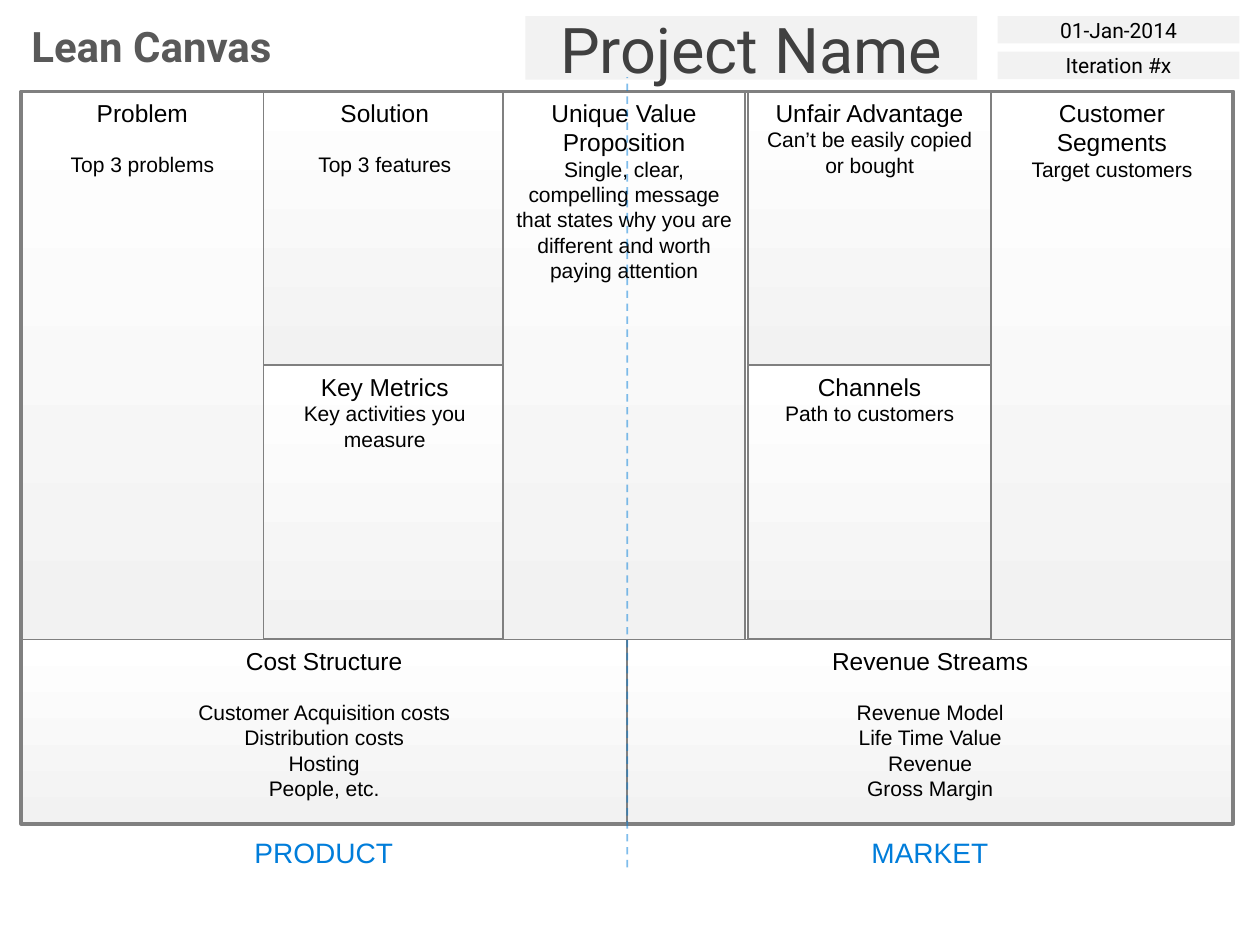
from lxml.etree import SubElement
from pptx import Presentation
from pptx.dml.color import RGBColor
from pptx.enum.dml import MSO_LINE
from pptx.enum.shapes import MSO_CONNECTOR, MSO_SHAPE
from pptx.enum.text import MSO_ANCHOR, MSO_AUTO_SIZE, PP_ALIGN
from pptx.oxml.ns import qn
from pptx.util import Pt

BLACK = RGBColor(0x00, 0x00, 0x00)
WHITE = RGBColor(0xFF, 0xFF, 0xFF)
PALE = RGBColor(0xF2, 0xF2, 0xF2)
GREY = RGBColor(0x80, 0x80, 0x80)
TITLE_GREY = RGBColor(0x59, 0x59, 0x59)
NAME_GREY = RGBColor(0x40, 0x40, 0x40)
BLUE = RGBColor(0x00, 0x7D, 0xDA)

# Canvas grid, in points
LEFT, TOP = 17.2, 74.3
COLUMN, HALF_ROW, BOTTOM_ROW = 197, 222.7, 149.8
WIDTH = 5 * COLUMN
TALL = 2 * HALF_ROW
MIDDLE = LEFT + WIDTH / 2
BLANK_LINE = 20


class Canvas:
    heading_size = 19.9
    body_size = 17.1

    def __init__(self, page):
        self.page = page

    def style(self, para, size, color, font="Arial", bold=False):
        para.alignment = PP_ALIGN.CENTER
        for span in para.runs:
            span.font.size = Pt(size)
            span.font.name = font
            span.font.bold = bold
            span.font.color.rgb = color

    def rectangle(self, left, top, width, height):
        box = self.page.shapes.add_shape(
            MSO_SHAPE.RECTANGLE, Pt(left), Pt(top), Pt(width), Pt(height))
        box.shadow.inherit = False
        return box

    def label(self, text, left, top, width, height, size, color, **font):
        box = self.page.shapes.add_textbox(Pt(left), Pt(top), Pt(width), Pt(height))
        frame = box.text_frame
        frame.text = text
        frame.word_wrap = False
        frame.auto_size = MSO_AUTO_SIZE.SHAPE_TO_FIT_TEXT
        self.style(frame.paragraphs[0], size, color, **font)

    def field(self, text, left, top, width, height, size, color):
        box = self.rectangle(left, top, width, height)
        box.fill.solid()
        box.fill.fore_color.rgb = PALE
        box.line.fill.background()
        frame = box.text_frame
        frame.text = text
        frame.vertical_anchor = MSO_ANCHOR.MIDDLE
        self.style(frame.paragraphs[0], size, color, font="Roboto")

    def block(self, left, top, width, height, heading, body, gap=0):
        box = self.rectangle(left, top, width, height)
        box.fill.gradient()
        box.fill.gradient_angle = 90
        for stop, color in zip(box.fill.gradient_stops, (PALE, WHITE)):
            stop.color.rgb = color
        box.line.color.rgb = GREY
        box.line.width = Pt(1.5)
        frame = box.text_frame
        frame.text = "\n".join([heading, *body])
        frame.word_wrap = True
        frame.vertical_anchor = MSO_ANCHOR.TOP
        frame.margin_left = frame.margin_right = Pt(10)
        frame.margin_top = frame.margin_bottom = Pt(5)
        first, *rest = frame.paragraphs
        self.style(first, self.heading_size, BLACK)
        for para in rest:
            self.style(para, self.body_size, BLACK)
        rest[0].space_before = Pt(gap)

    def border(self, left, top, width, height):
        box = self.rectangle(left, top, width, height)
        box.fill.background()
        box.line.color.rgb = GREY
        box.line.width = Pt(3)

    def divider(self, x, start, end):
        line = self.page.shapes.add_connector(
            MSO_CONNECTOR.STRAIGHT, Pt(x), Pt(start), Pt(x), Pt(end))
        line.line.color.rgb = BLUE
        line.line.width = Pt(1.5)
        line.line.dash_style = MSO_LINE.DASH
        properties = line.element.spPr
        SubElement(properties, qn("a:effectLst"))
        color = next(properties.iter(qn("a:srgbClr")))
        SubElement(color, qn("a:alpha")).set("val", "50000")


def main():
    deck = Presentation()
    deck.slide_width, deck.slide_height = Pt(1024), Pt(768)
    canvas = Canvas(deck.slides.add_slide(deck.slide_layouts[6]))

    # Header
    canvas.label("Lean Canvas", 9.4, 13, 227.5, 49, 34.1, TITLE_GREY,
                 font="Roboto", bold=True)
    canvas.field("Project Name", 427, 13, 367.2, 51.8, 51.2, NAME_GREY)
    for top, text in ((13, "01-Jan-2014"), (42, "Iteration #x")):
        canvas.field(text, 810.7, top, 196.6, 22.3, 17.1, BLACK)

    # Bottom row: costs and revenue
    bottom_blocks = (
        ("Cost Structure", ["Customer Acquisition costs", "Distribution costs",
                            "Hosting", "People, etc."]),
        ("Revenue Streams", ["Revenue Model", "Life Time Value",
                             "Revenue", "Gross Margin"]),
    )
    for side, (heading, body) in enumerate(bottom_blocks):
        canvas.block(LEFT + side * WIDTH / 2, TOP + TALL, WIDTH / 2, BOTTOM_ROW,
                     heading, body, BLANK_LINE)

    # Five columns, each with one tall block or two half blocks;
    # the middle one is set slightly to the left
    columns = (
        (0, [("Problem", "Top 3 problems", BLANK_LINE)]),
        (0, [("Solution", "Top 3 features", BLANK_LINE),
             ("Key Metrics", "Key activities you measure", 0)]),
        (-2.5, [("Unique Value Proposition",
                 "Single, clear, compelling message that states why you are "
                 "different and worth paying attention", 0)]),
        (0, [("Unfair Advantage", "Can’t be easily copied or bought", 0),
             ("Channels", "Path to customers", 0)]),
        (0, [("Customer Segments", "Target customers", 0)]),
    )
    for index, (shift, blocks) in enumerate(columns):
        height = TALL / len(blocks)
        for row, (heading, body, gap) in enumerate(blocks):
            canvas.block(LEFT + index * COLUMN + shift, TOP + row * height,
                         COLUMN, height, heading, [body], gap)

    # Outer border, side labels and dividing line
    canvas.border(LEFT, TOP, WIDTH, TALL + BOTTOM_ROW)
    canvas.label("PRODUCT", 199.4, 675.4, 127.4, 34.6, 22.8, BLUE)
    canvas.label("MARKET", 700.6, 675.4, 110.2, 34.6, 22.8, BLUE)
    canvas.divider(MIDDLE, 704.9, 62.6)

    deck.save("out.pptx")


if __name__ == "__main__":
    main()
